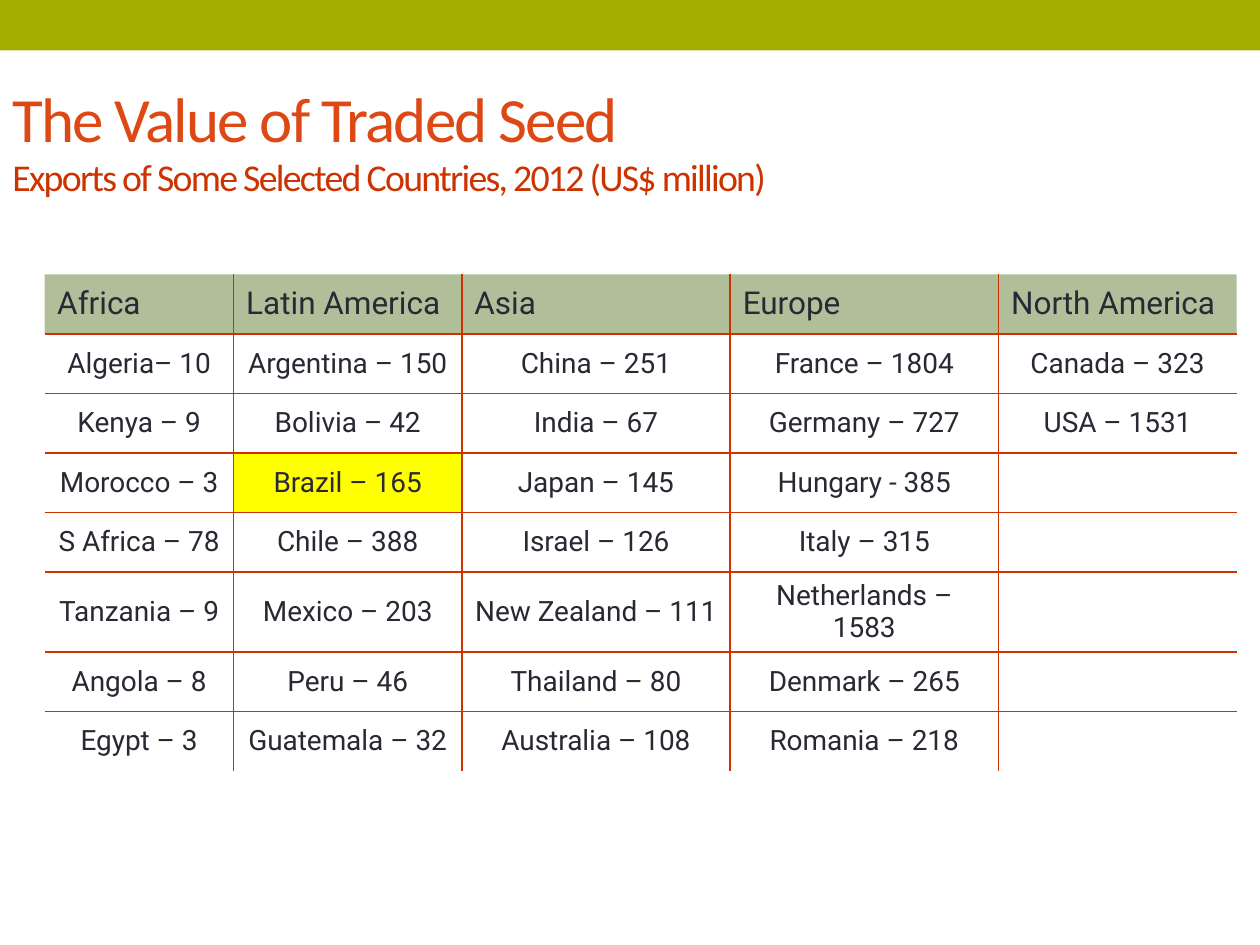
from lxml import etree
from pptx import Presentation
from pptx import util as u
from pptx.dml.color import RGBColor
from pptx.enum import shapes, text
from pptx.oxml.ns import qn

TITLE = [
    ("The Value of Traded Seed", 36, "DD4814"),
    ("Exports of Some Selected Countries, 2012 (US$ million)", 21.6, "CC3300"),
]
EXPORTS = {
    "Africa": ["Algeria– 10", "Kenya – 9", "Morocco – 3", "S Africa – 78",
               "Tanzania – 9", "Angola – 8", "Egypt – 3"],
    "Latin America": ["Argentina – 150", "Bolivia – 42", "Brazil – 165", "Chile – 388",
                      "Mexico – 203", "Peru – 46", "Guatemala – 32"],
    "Asia": ["China – 251", "India – 67", "Japan – 145", "Israel – 126",
             "New Zealand – 111", "Thailand – 80", "Australia – 108"],
    "Europe": ["France – 1804", "Germany – 727", "Hungary - 385", "Italy – 315",
               "Netherlands – 1583", "Denmark – 265", "Romania – 218"],
    "North America": ["Canada – 323", "USA – 1531"],
}
COLUMN_WIDTHS = [3.81, 4.6, 5.41, 5.41, 4.8]
ROW_HEIGHT = 1.2
ROW_COUNT = 1 + max(len(countries) for countries in EXPORTS.values())
HIGHLIGHT = "Brazil – 165"


def color(value):
    return RGBColor.from_string(value)


def paint(fill, value):
    fill.solid()
    fill.fore_color.rgb = color(value)


def draw_borders(cell, visible):
    properties = cell._tc.get_or_add_tcPr()
    for side in "LRTB":
        line = etree.SubElement(properties, qn(f"a:ln{side}"), w=str(u.Pt(1)))
        if side in visible:
            solid = etree.SubElement(line, qn("a:solidFill"))
            etree.SubElement(solid, qn("a:srgbClr"), val="CC3300")
        else:
            etree.SubElement(line, qn("a:noFill"))


def add_title(page):
    box = page.shapes.add_textbox(u.Cm(0), u.Cm(1.47), u.Cm(25.4), u.Cm(2.8))
    frame = box.text_frame
    frame.word_wrap = True
    frame.vertical_anchor = text.MSO_ANCHOR.MIDDLE
    para = frame.paragraphs[0]
    para.line_spacing = 0.95
    para.font.name = "Calibri"
    for index, (words, size, shade) in enumerate(TITLE):
        if index:
            para.add_line_break()
        span = para.add_run()
        span.text = words
        span.font.size = u.Pt(size)
        span.font.color.rgb = color(shade)
        span.font._element.set("spc", "-100")


def fill_cell(cell, words, is_header):
    cell.vertical_anchor = text.MSO_ANCHOR.MIDDLE
    para = cell.text_frame.paragraphs[0]
    if words:
        para.add_run().text = words
    para.alignment = text.PP_ALIGN.LEFT if is_header else text.PP_ALIGN.CENTER
    para.font.name = "Roboto"
    para.font.size = u.Pt(18 if is_header else 16)
    para.font.color.rgb = color("292934")
    if is_header:
        paint(cell.fill, "637F35")
        shade = cell._tc.tcPr.find(qn("a:solidFill"))[0]
        etree.SubElement(shade, qn("a:alpha"), val="50000")
    elif words == HIGHLIGHT:
        paint(cell.fill, "FFFF00")
    else:
        cell.fill.background()


def add_exports(page):
    table = page.shapes.add_table(
        ROW_COUNT, len(EXPORTS), u.Cm(0.9), u.Cm(5.53),
        u.Cm(sum(COLUMN_WIDTHS)), u.Cm(ROW_HEIGHT * ROW_COUNT)).table
    table.horz_banding = False
    table.first_row = False
    for row in table.rows:
        row.height = u.Cm(ROW_HEIGHT)
    last_column = len(EXPORTS) - 1
    for c, (region, countries) in enumerate(EXPORTS.items()):
        table.columns[c].width = u.Cm(COLUMN_WIDTHS[c])
        entries = [region] + countries
        for r in range(ROW_COUNT):
            cell = table.cell(r, c)
            inner = {"L": c > 0, "R": c < last_column, "T": r > 0, "B": r < ROW_COUNT - 1}
            draw_borders(cell, [side for side, shown in inner.items() if shown])
            fill_cell(cell, entries[r] if r < len(entries) else "", r == 0)


def main():
    deck = Presentation()
    deck.slide_width, deck.slide_height = u.Cm(25.4), u.Cm(19.05)
    page = deck.slides.add_slide(deck.slide_layouts[6])
    band = page.shapes.add_shape(
        shapes.MSO_SHAPE.RECTANGLE, u.Cm(0), u.Cm(0), deck.slide_width, u.Cm(1.02))
    band.shadow.inherit = False
    paint(band.fill, "A2AD00")
    band.line.fill.background()
    add_title(page)
    add_exports(page)
    deck.save("out.pptx")


if __name__ == "__main__":
    main()
